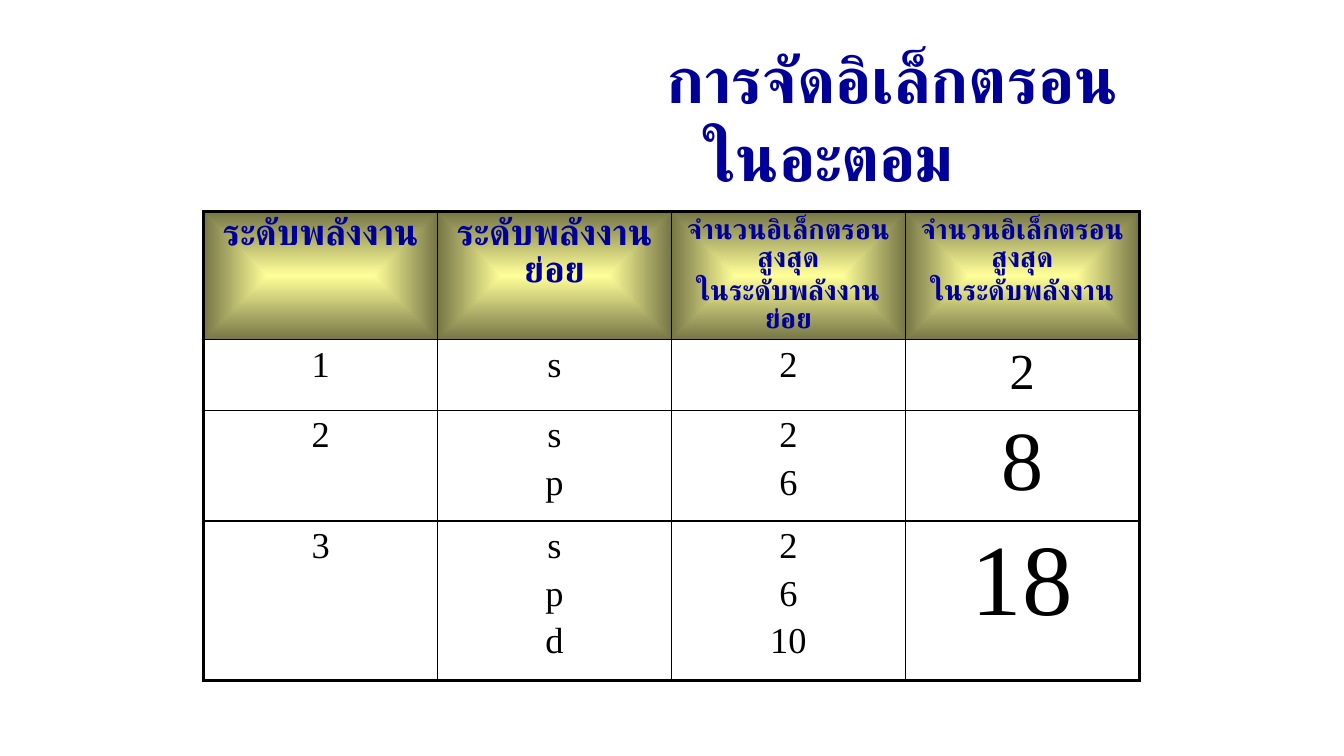
from dataclasses import dataclass

from lxml import etree
from pptx import Presentation
from pptx.dml.color import RGBColor
from pptx.enum.text import MSO_ANCHOR, PP_ALIGN
from pptx.oxml import parse_xml
from pptx.oxml.ns import nsdecls, qn
from pptx.util import Inches, Pt

CENTER, LEFT = PP_ALIGN.CENTER, PP_ALIGN.LEFT
TOP = MSO_ANCHOR.TOP
TITLE_ONLY = 5


@dataclass(frozen=True)
class Theme:
    heading: str = "000099"
    ink: str = "000000"
    glow: str = "FFFF99"
    shade: str = "767647"
    title_font: str = "Arial"
    header_font: str = "DejaVu Sans"
    body_font: str = "Times New Roman"
    title_size: int = 46
    large_size: int = 26
    small_size: int = 20
    outer_line: float = 2.25
    inner_line: float = 1


THEME = Theme()

HEADERS = [
    ("ระดับพลังงาน", THEME.large_size),
    ("ระดับพลังงานย่อย", THEME.large_size),
    ("จำนวนอิเล็กตรอนสูงสุด\nในระดับพลังงานย่อย", THEME.small_size),
    ("จำนวนอิเล็กตรอนสูงสุด\nในระดับพลังงาน", THEME.small_size),
]
# Level, sublevels, electrons per sublevel, electrons per level, size of the total
LEVELS = [
    ("1", "s", "2", "2", 36),
    ("2", "s\np", "2\n6", "8", 60),
    ("3", "s\np\nd", "2\n6\n10", "18", 72),
]
ROW_HEIGHTS = [0.89, 0.7, 1.1, 1.58]
COLUMN_WIDTH = 2.32


def format_text(frame, font, size, color, bold, align):
    for paragraph in frame.paragraphs:
        paragraph.alignment = align
        paragraph.line_spacing = 1.0
        properties = paragraph._p.get_or_add_pPr()
        spacing = parse_xml(f'<a:spcBef {nsdecls("a")}><a:spcPct val="20000"/></a:spcBef>')
        properties.find(qn("a:lnSpc")).addnext(spacing)
        for run in paragraph.runs:
            run.font.name = font
            run.font.size = Pt(size)
            run.font.bold = bold
            run.font.color.rgb = RGBColor.from_string(color)
            run._r.get_or_add_rPr().set("lang", "th-TH")


def add_title(slide, text):
    title = slide.shapes.title
    title.left, title.top = Inches(6.51), Inches(0.34)
    title.width, title.height = Inches(5.04), Inches(0.89)
    frame = title.text_frame
    frame.text = text
    frame.word_wrap = True
    frame.vertical_anchor = TOP
    format_text(frame, THEME.title_font, THEME.title_size, THEME.heading, True, LEFT)
    # Hanging indent for the wrapped line
    properties = frame.paragraphs[0]._p.get_or_add_pPr()
    properties.set("marL", str(Inches(0.38)))
    properties.set("indent", str(-Inches(0.38)))


def set_borders(cell, widths):
    properties = cell._tc.get_or_add_tcPr()
    for index, (side, width) in enumerate(widths.items()):
        line = parse_xml(
            f'<a:ln{side} {nsdecls("a")} w="{Pt(width)}"><a:solidFill>'
            f'<a:srgbClr val="{THEME.ink}"/></a:solidFill></a:ln{side}>')
        properties.insert(index, line)


def fill_header(cell):
    gradient = parse_xml(
        f'<a:gradFill {nsdecls("a")} rotWithShape="0"><a:gsLst>'
        f'<a:gs pos="0"><a:srgbClr val="{THEME.glow}"/></a:gs>'
        f'<a:gs pos="100000"><a:srgbClr val="{THEME.shade}"/></a:gs></a:gsLst>'
        '<a:path path="shape"><a:fillToRect l="50000" t="50000" r="50000" b="50000"/>'
        '</a:path></a:gradFill>')
    cell._tc.get_or_add_tcPr().append(gradient)


def fill_cell(cell, text, font, size, color, bold):
    cell.text_frame.text = text
    cell.vertical_anchor = TOP
    format_text(cell.text_frame, font, size, color, bold, CENTER)


def add_electron_table(slide):
    row_count, column_count = len(LEVELS) + 1, len(HEADERS)
    frame = slide.shapes.add_table(
        row_count, column_count, Inches(2.02), Inches(2.1),
        Inches(COLUMN_WIDTH * column_count), Inches(sum(ROW_HEIGHTS)))
    table = frame.table
    table.first_row = table.horz_banding = False
    for column in table.columns:
        column.width = Inches(COLUMN_WIDTH)
    for row, height in zip(table.rows, ROW_HEIGHTS):
        row.height = Inches(height)

    # Header row
    for column, (text, size) in enumerate(HEADERS):
        cell = table.cell(0, column)
        fill_cell(cell, text, THEME.header_font, size, THEME.heading, True)
        fill_header(cell)

    # One row for each energy level
    for row, (*texts, total_size) in enumerate(LEVELS, start=1):
        sizes = [THEME.large_size] * (column_count - 1) + [total_size]
        for column, (text, size) in enumerate(zip(texts, sizes)):
            cell = table.cell(row, column)
            fill_cell(cell, text, THEME.body_font, size, THEME.ink, False)
            cell.fill.background()

    # Heavy frame, thin inner lines
    for row in range(row_count):
        for column in range(column_count):
            on_frame = {"L": column == 0, "R": column == column_count - 1,
                        "T": row == 0, "B": row == row_count - 1}
            set_borders(table.cell(row, column), {
                side: THEME.outer_line if outer else THEME.inner_line
                for side, outer in on_frame.items()})


def main():
    deck = Presentation()
    deck.slide_width, deck.slide_height = Inches(13.33), Inches(7.5)
    slide = deck.slides.add_slide(deck.slide_layouts[TITLE_ONLY])
    add_title(slide, "การจัดอิเล็กตรอนในอะตอม")
    add_electron_table(slide)
    deck.save("out.pptx")


if __name__ == "__main__":
    main()
